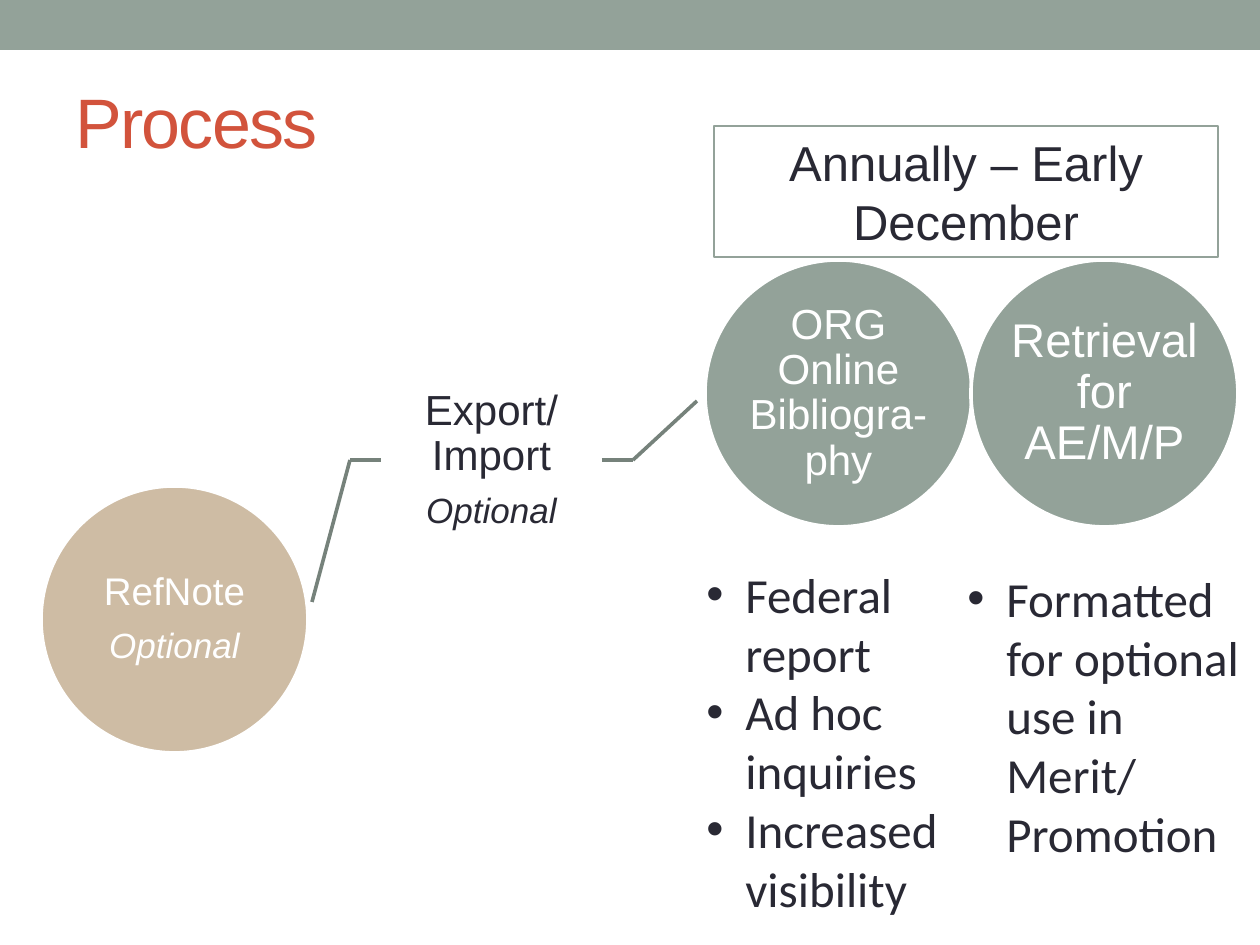
"""Build the Process slide: a three-step flow with notes under its last two circles."""
from lxml import etree
from pptx import Presentation
from pptx import util as u
from pptx.dml.color import RGBColor
from pptx.enum import shapes, text
from pptx.oxml import ns

SCALE = 914400 / 126
WHITE = RGBColor(0xFF, 0xFF, 0xFF)
SAGE = RGBColor(0x93, 0xA2, 0x99)
SAND = RGBColor(0xCE, 0xBC, 0xA4)
SLATE = RGBColor(0x76, 0x82, 0x7B)
RUST = RGBColor(0xD2, 0x53, 0x3C)
INK = RGBColor(0x29, 0x29, 0x34)

CIRCLE = 267
INDENT = 39
MARGINS = ("margin_left", "margin_top", "margin_right", "margin_bottom")
CENTRED = {"alignment": text.PP_ALIGN.CENTER}
STEP = {**CENTRED, "line_spacing": 0.9, "space_after": u.Pt(8)}


def px(length):
    """Turn pixels into EMU."""
    return round(length * SCALE)


def apply(target, values):
    """Set each attribute in a dict of format values."""
    for name, value in values.items():
        setattr(target, name, value)


def font(size, color, name="Arial", **more):
    """Return the format values of a font."""
    return {"size": u.Pt(size), "color": color, "name": name, **more}


def write(shape, lines, layout=None, anchor=text.MSO_ANCHOR.MIDDLE, margin=None):
    """Fill a shape with paragraphs given as pairs of wording and font."""
    frame = shape.text_frame
    apply(frame, {"word_wrap": True, "vertical_anchor": anchor})
    if margin is not None:
        apply(frame, dict.fromkeys(MARGINS, px(margin)))
    for index, (wording, values) in enumerate(lines):
        paragraph = frame.add_paragraph() if index else frame.paragraphs[0]
        apply(paragraph, layout or {})
        run = paragraph.add_run()
        run.text = wording
        run.font.color.rgb = values["color"]
        apply(run.font, {key: value for key, value in values.items() if key != "color"})
    return frame


def add_shape(slide, kind, box, fill=None, line=None, width=0.75):
    """Add a preset shape with a plain fill and outline."""
    shape = slide.shapes.add_shape(kind, *map(px, box))
    shape.shadow.inherit = False
    for part, color in ((shape.fill, fill), (shape.line.fill, line)):
        if color is None:
            part.background()
        else:
            part.solid()
            part.fore_color.rgb = color
    if line is not None:
        shape.line.width = u.Pt(width)
    return shape


def add_circle(slide, left, top, fill, lines):
    """Add a step circle with its wording."""
    box = (left, top, CIRCLE, CIRCLE)
    circle = add_shape(slide, shapes.MSO_SHAPE.OVAL, box, fill, WHITE, 2.08)
    write(circle, lines, STEP, margin=0)


def add_text(slide, box, lines, **options):
    """Add a text box."""
    shape = slide.shapes.add_textbox(*map(px, box))
    write(shape, lines, **options)
    return shape


def add_bullets(slide, box, items):
    """Add a bulleted list."""
    lines = [(item, font(28, INK, "Calibri")) for item in items]
    shape = add_text(slide, box, lines, anchor=text.MSO_ANCHOR.TOP)
    shape.text_frame.auto_size = text.MSO_AUTO_SIZE.SHAPE_TO_FIT_TEXT
    for paragraph in shape.text_frame.paragraphs:
        properties = paragraph._p.get_or_add_pPr()
        properties.set("marL", str(px(INDENT)))
        properties.set("indent", str(px(-INDENT)))
        etree.SubElement(properties, ns.qn("a:buFont")).set("typeface", "Arial")
        etree.SubElement(properties, ns.qn("a:buChar")).set("char", "•")


def add_line(slide, start, end):
    """Add a straight connector line."""
    points = map(px, (*start, *end))
    line = slide.shapes.add_connector(shapes.MSO_CONNECTOR.STRAIGHT, *points)
    line.line.color.rgb = SLATE
    line.line.width = u.Pt(2.08)
    etree.SubElement(line._element.spPr, ns.qn("a:effectLst"))
    return line


def add_flow(slide):
    """Add the three circles, the export step and the lines between them."""
    add_circle(slide, 41, 486, SAND, [
        ("RefNote", font(22, WHITE)), ("Optional", font(20, WHITE, italic=True))])
    export = add_text(slide, (381, 394, 221, 132), [
        ("Export/ Import", font(24, INK)), ("Optional", font(20, INK, italic=True))],
        layout=STEP, margin=24)
    add_line(slide, (312, 602), (350, 460))
    add_line(slide, (350, 460), (381, 460)).end_connect(export, 1)
    add_line(slide, (602, 460), (633, 460)).begin_connect(export, 3)
    add_line(slide, (633, 460), (697, 401))
    add_circle(slide, 705, 260, SAGE, [("ORG Online Bibliogra-phy", font(24, WHITE))])
    add_circle(slide, 971, 260, SAGE, [("Retrieval for AE/M/P", font(27, WHITE))])


def main():
    """Build and save the slide."""
    presentation = Presentation()
    apply(presentation, {"slide_width": px(1260), "slide_height": px(945)})
    slide = presentation.slides.add_slide(presentation.slide_layouts[6])
    add_shape(slide, shapes.MSO_SHAPE.RECTANGLE, (0, 0, 1260, 50), SAGE)
    add_flow(slide)
    title = add_text(slide, (63, 53, 1134, 136), [("Process", font(40, RUST))])
    title.text_frame.paragraphs[0].runs[0]._r.get_or_add_rPr().set("spc", "-100")
    add_bullets(slide, (955, 562, 305, 310),
                ["Formatted for optional use in Merit/ Promotion"])
    add_bullets(slide, (694, 558, 261, 369),
                ["Federal report", "Ad hoc inquiries", "Increased visibility"])
    deadline = add_shape(slide, shapes.MSO_SHAPE.RECTANGLE, (714, 126, 504, 131), line=SAGE)
    write(deadline, [("Annually – Early December", font(28, INK))], CENTRED)
    presentation.save("out.pptx")


if __name__ == "__main__":
    main()
